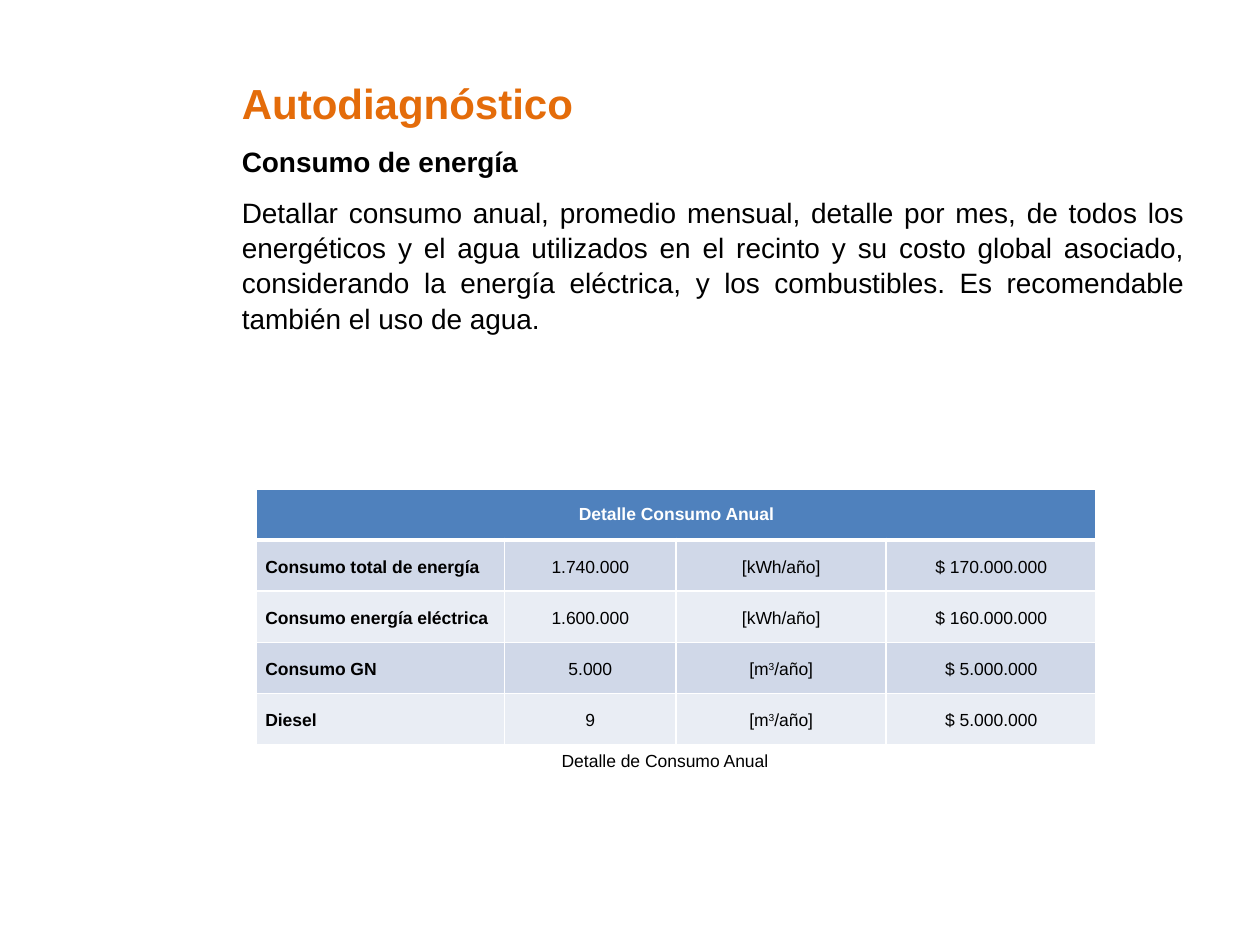
from lxml import etree
from pptx import Presentation
from pptx.dml.color import RGBColor
from pptx.enum.text import MSO_ANCHOR, MSO_AUTO_SIZE, PP_ALIGN
from pptx.oxml.ns import qn
from pptx.util import Pt

LEFT, CENTER, JUSTIFY = PP_ALIGN.LEFT, PP_ALIGN.CENTER, PP_ALIGN.JUSTIFY
TOP, MIDDLE = MSO_ANCHOR.TOP, MSO_ANCHOR.MIDDLE
FIT_SHAPE, NO_FIT = MSO_AUTO_SIZE.SHAPE_TO_FIT_TEXT, MSO_AUTO_SIZE.NONE
ORANGE = RGBColor(0xE4, 0x6C, 0x0A)
BLACK = RGBColor(0, 0, 0)
WHITE = RGBColor(0xFF, 0xFF, 0xFF)
BLUE = RGBColor(0x4F, 0x81, 0xBD)
BANDS = (RGBColor(0xD0, 0xD8, 0xE8), RGBColor(0xE9, 0xED, 0xF4))

TITLE = "Autodiagnóstico"
SUBTITLE = "Consumo de energía"
BODY = (
    "Detallar consumo anual, promedio mensual, detalle por mes, de todos los "
    "energéticos y el agua utilizados en el recinto y su costo global asociado, "
    "considerando la energía eléctrica, y los combustibles. Es recomendable "
    "también el uso de agua."
)
TABLE_TITLE = "Detalle Consumo Anual"
ENERGY = ["[kWh/año]"]
VOLUME = ["[m", "3", "/año]"]
ROWS = [
    (["Consumo total de energía"], ["1.740.000"], ENERGY, ["$ 170.000.000"]),
    (["Consumo energía eléctrica"], ["1.600.000"], ENERGY, ["$ 160.000.000"]),
    (["Consumo GN"], ["5.000"], VOLUME, ["$ 5.000.000"]),
    (["Diesel"], ["9"], VOLUME, ["$ 5.000.000"]),
]
CAPTION = "Detalle de Consumo Anual"
COLUMN_WIDTHS = (141.6, 98.2, 120, 120)
ROW_HEIGHT = 29.2


def add_span(para, text, size, color, bold=False):
    span = para.add_run()
    span.text = text
    font = span.font
    font.name, font.size, font.bold = "Arial", Pt(size), bold
    font.color.rgb = color
    return span


def place(shape, left, top, width, height):
    shape.left, shape.top = Pt(left), Pt(top)
    shape.width, shape.height = Pt(width), Pt(height)


def add_borders(cell, top_width, bottom_width):
    properties = cell._tc.get_or_add_tcPr()
    for side, width in (("L", 1), ("R", 1), ("T", top_width), ("B", bottom_width)):
        line = etree.SubElement(properties, qn("a:ln" + side), w=str(Pt(width)))
        fill = etree.SubElement(line, qn("a:solidFill"))
        etree.SubElement(fill, qn("a:srgbClr"), val=str(WHITE))


def add_title(page):
    title = page.shapes.title
    place(title, 131, 37.4, 517.7, 32.4)
    frame = title.text_frame
    frame.auto_size, frame.vertical_anchor = NO_FIT, TOP
    frame.margin_top = Pt(6.8)
    para = frame.paragraphs[0]
    para.alignment = LEFT
    add_span(para, TITLE, 24, ORANGE, True)


def add_body(page):
    body = page.placeholders[1]
    place(body, 131, 77.8, 553, 449.3)
    frame = body.text_frame
    frame.auto_size, frame.vertical_anchor = NO_FIT, TOP
    paragraphs = [(SUBTITLE, True, LEFT, 0, 6), (BODY, False, JUSTIFY, 3.2, 0)]
    for index, (text, bold, align, before, after) in enumerate(paragraphs):
        para = frame.add_paragraph() if index else frame.paragraphs[0]
        para.alignment, para.line_spacing = align, 1.05
        para.space_before, para.space_after = Pt(before), Pt(after)
        properties = para._p.get_or_add_pPr()
        properties.set("marL", "0")
        properties.set("indent", "0")
        etree.SubElement(properties, qn("a:buNone"))
        add_span(para, text, 16, BLACK, bold)


def add_consumption_table(page):
    row_count = len(ROWS) + 1
    table = page.shapes.add_table(
        row_count, len(COLUMN_WIDTHS), Pt(146.6), Pt(279.4),
        Pt(sum(COLUMN_WIDTHS)), Pt(ROW_HEIGHT * row_count),
    ).table
    for column, width in zip(table.columns, COLUMN_WIDTHS):
        column.width = Pt(width)
    for row in table.rows:
        row.height = Pt(ROW_HEIGHT)

    for cell in table.rows[0].cells:
        add_borders(cell, 1, 3)
        cell.fill.solid()
        cell.fill.fore_color.rgb = BLUE
    header = table.cell(0, 0)
    header.merge(table.cell(0, len(COLUMN_WIDTHS) - 1))
    header.vertical_anchor = MIDDLE
    para = header.text_frame.paragraphs[0]
    para.alignment = CENTER
    add_span(para, TABLE_TITLE, 10, WHITE, True)

    for row, values in enumerate(ROWS, 1):
        for column, parts in enumerate(values):
            cell = table.cell(row, column)
            add_borders(cell, 3 if row == 1 else 1, 1)
            cell.fill.solid()
            cell.fill.fore_color.rgb = BANDS[(row - 1) % 2]
            cell.vertical_anchor = MIDDLE
            cell.margin_left = cell.margin_right = Pt(5)
            cell.margin_top = cell.margin_bottom = Pt(0)
            para = cell.text_frame.paragraphs[0]
            para.alignment = CENTER if column else LEFT
            para.line_spacing = 1.15
            for index, text in enumerate(parts):
                span = add_span(para, text, 10, BLACK, column == 0)
                if index == 1:
                    span._r.get_or_add_rPr().set("baseline", "30000")


def add_caption(page):
    box = page.shapes.add_textbox(Pt(313.9), Pt(424.8), Pt(141.1), Pt(19.4))
    frame = box.text_frame
    frame.word_wrap, frame.auto_size = True, FIT_SHAPE
    add_span(frame.paragraphs[0], CAPTION, 10, BLACK)


def main():
    deck = Presentation()
    deck.slide_width, deck.slide_height = Pt(720), Pt(540)
    page = deck.slides.add_slide(deck.slide_layouts[1])
    add_body(page)
    add_title(page)
    add_consumption_table(page)
    add_caption(page)
    deck.save("out.pptx")


if __name__ == "__main__":
    main()
